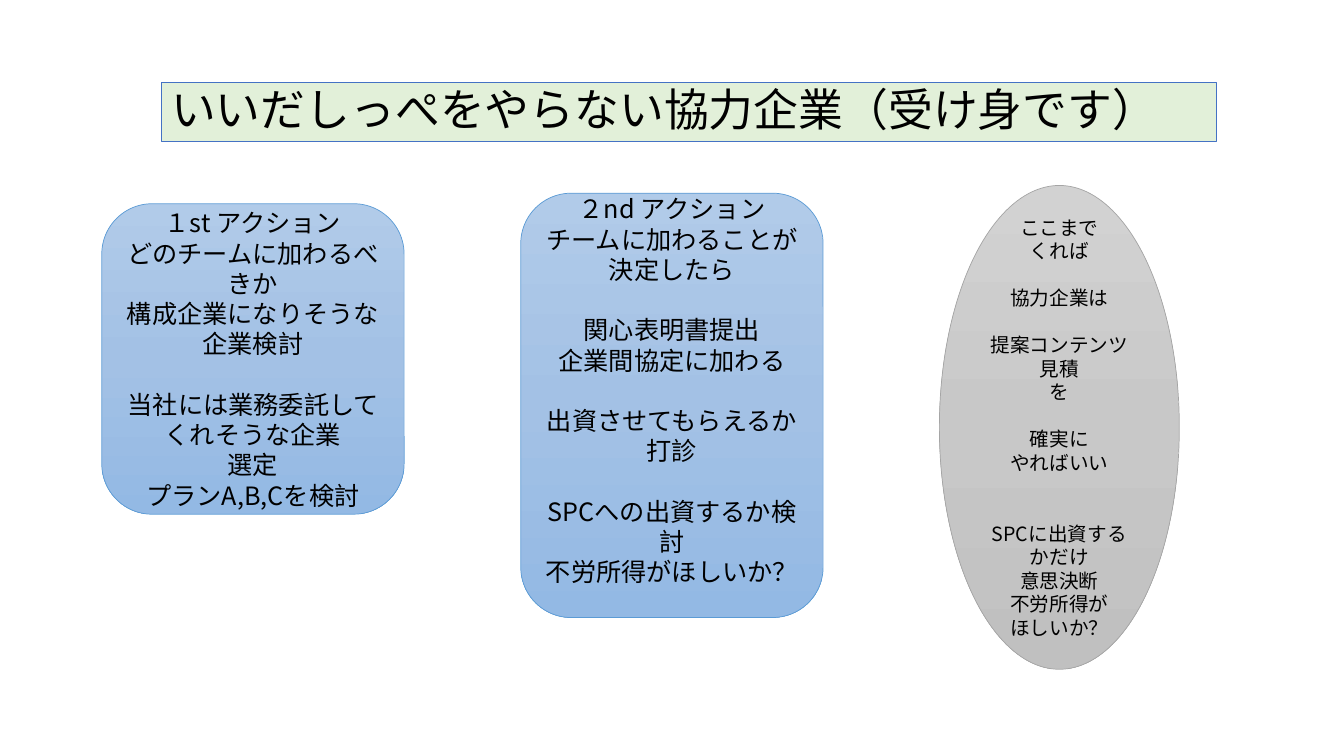
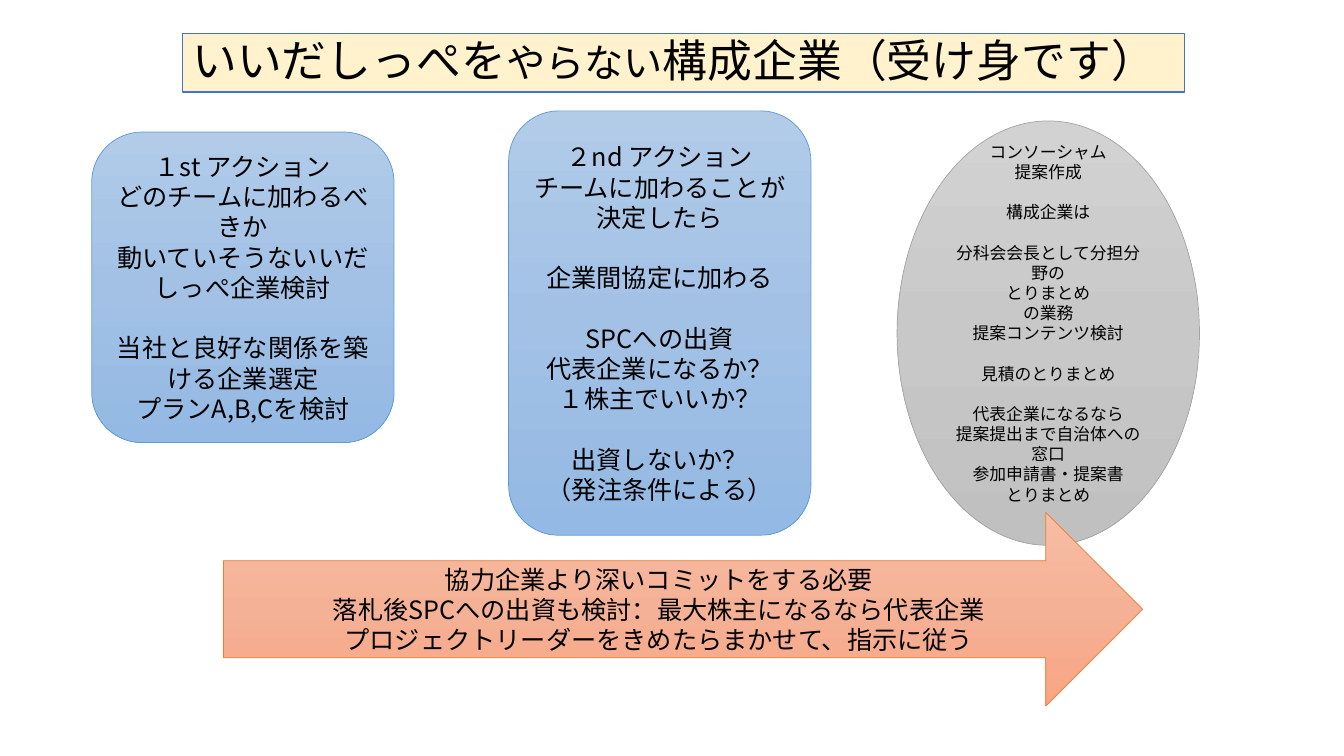
from copy import deepcopy

from lxml import etree
from pptx import Presentation
from pptx.dml.color import RGBColor
from pptx.enum.shapes import MSO_SHAPE
from pptx.enum.text import MSO_ANCHOR, PP_ALIGN
from pptx.oxml.ns import qn
from pptx.util import Pt

RECTANGLE = MSO_SHAPE.RECTANGLE
ROUNDED = MSO_SHAPE.ROUNDED_RECTANGLE
OVAL = MSO_SHAPE.OVAL
ARROW = MSO_SHAPE.RIGHT_ARROW
MIDDLE = MSO_ANCHOR.MIDDLE
LEFT = PP_ALIGN.LEFT
CENTER = PP_ALIGN.CENTER

FONT = "Noto Sans CJK JP"
LINE_FACTOR = 1.2
TITLE_HEIGHT = 42
CARD_WIDTH = 216
COLORS = {
    "text": "000000",
    "title_line": "4472C4",
    "green": "E2F0D9",
    "cream": "FFF2CC",
}
GRADIENTS = {
    "blue": (("B1CBE9", "A3C1E5", "93B9E4"), "5B9BD5"),
    "gray": (("D2D2D2", "C8C8C8", "C0C0C0"), "A5A5A5"),
    "orange": (("F7BDA5", "F5B196", "F8A582"), "ED7D31"),
}


def color(value):
    return RGBColor.from_string(value)


def add_box(page, kind, left, top, width, height, line, line_width):
    box = page.shapes.add_shape(kind, Pt(left), Pt(top), Pt(width), Pt(height))
    box.shadow.inherit = False
    box.line.color.rgb = color(line)
    box.line.width = Pt(line_width)
    box.text_frame.word_wrap = True
    box.text_frame.vertical_anchor = MIDDLE
    return box


def fill_gradient(box, stops):
    box.fill.gradient()
    box.fill.gradient_angle = 270
    stop_list = box._element.spPr.find(".//" + qn("a:gsLst"))
    middle = deepcopy(stop_list[0])
    middle.set("pos", "50000")
    stop_list.insert(1, middle)
    for stop, value in zip(box.fill.gradient_stops, stops):
        stop.color.rgb = color(value)


def add_span(para, text, size):
    span = para.add_run()
    span.text = text
    span.font.size = Pt(size)
    span.font.color.rgb = color(COLORS["text"])
    span.font.name = FONT
    east_asian = etree.SubElement(span.font._element, qn("a:ea"))
    east_asian.set("typeface", FONT)


def add_title(page, left, top, width, fill, spans):
    box = add_box(page, RECTANGLE, left, top, width, TITLE_HEIGHT, COLORS["title_line"], 1)
    box.fill.solid()
    box.fill.fore_color.rgb = color(COLORS[fill])
    para = box.text_frame.paragraphs[0]
    para.alignment = LEFT
    para.line_spacing = 0.9
    for text, size in spans:
        add_span(para, text, size)


def write_groups(frame, groups, size):
    pitch = round(size * LINE_FACTOR, 2)
    para = frame.paragraphs[0]
    gap = 0
    for group in groups:
        for text in group:
            if para.runs:
                para = frame.add_paragraph()
            para.alignment = CENTER
            para.line_spacing = Pt(pitch)
            para.space_before = Pt(gap)
            add_span(para, text, size)
            gap = 0
        gap += pitch
    frame.margin_bottom += Pt(gap - pitch)


def add_panel(page, kind, left, top, width, height, palette, size, groups):
    stops, line = GRADIENTS[palette]
    box = add_box(page, kind, left, top, width, height, line, 0.5)
    fill_gradient(box, stops)
    write_groups(box.text_frame, groups, size)


def add_card(page, left, top, height, groups):
    add_panel(page, ROUNDED, left, top, CARD_WIDTH, height, "blue", 18, groups)


def build_partner_page(page):
    add_title(page, 115.2, 59, 753.8, "green", [("いいだしっぺをやらない協力企業（受け身です）", 32)])
    add_card(page, 72.7, 145.5, 221.8, [
        ["１st アクション", "どのチームに加わるべきか", "構成企業になりそうな", "企業検討"],
        ["当社には業務委託してくれそうな企業", "選定", "プランA,B,Cを検討"],
    ])
    add_card(page, 372, 138, 303.1, [
        ["２nd アクション", "チームに加わることが", "決定したら"],
        ["関心表明書提出", "企業間協定に加わる"],
        ["出資させてもらえるか", "打診"],
        ["SPCへの出資するか検討", "不労所得がほしいか？"],
        [],
    ])
    add_panel(page, OVAL, 671, 132.5, 171.4, 345.6, "gray", 14, [
        ["ここまで", "くれば"],
        ["協力企業は"],
        ["提案コンテンツ", "見積", "を"],
        ["確実に", "やればいい"],
        [],
        ["SPCに出資するかだけ", "意思決断", "不労所得が", "ほしいか？"],
    ])


def build_member_page(page):
    add_title(page, 130.3, 23.8, 715.7, "cream", [
        ("いいだしっぺを", 32),
        ("やらない", 28),
        ("構成企業（受け身です）", 32),
    ])
    add_card(page, 65.5, 94.3, 221.8, [
        ["１st アクション", "どのチームに加わるべきか", "動いていそうないいだしっぺ企業検討"],
        ["当社と良好な関係を築ける企業選定", "プランA,B,Cを検討"],
    ])
    add_card(page, 363.3, 79.2, 303.1, [
        ["２nd アクション", "チームに加わることが", "決定したら"],
        ["企業間協定に加わる"],
        ["SPCへの出資", "代表企業になるか？", "１株主でいいか？"],
        ["出資しないか？", "（発注条件による）"],
    ])
    add_panel(page, OVAL, 640.8, 86.4, 216, 303.1, "gray", 12, [
        ["コンソーシャム", "提案作成"],
        ["構成企業は"],
        ["分科会会長として分担分野の", "とりまとめ", "の業務", "提案コンテンツ検討"],
        ["見積のとりまとめ"],
        ["代表企業になるなら", "提案提出まで自治体への窓口", "参加申請書・提案書", "とりまとめ"],
        [],
    ])
    add_panel(page, ARROW, 159.6, 366, 656.6, 138.4, "orange", 18, [[
        "協力企業より深いコミットをする必要",
        "落札後SPCへの出資も検討：最大株主になるなら代表企業",
        "プロジェクトリーダーをきめたらまかせて、指示に従う",
    ]])


def main():
    deck = Presentation()
    deck.slide_width = Pt(960)
    deck.slide_height = Pt(540)
    blank = deck.slide_layouts[6]
    for build in (build_partner_page, build_member_page):
        build(deck.slides.add_slide(blank))
    deck.save("out.pptx")


if __name__ == "__main__":
    main()
